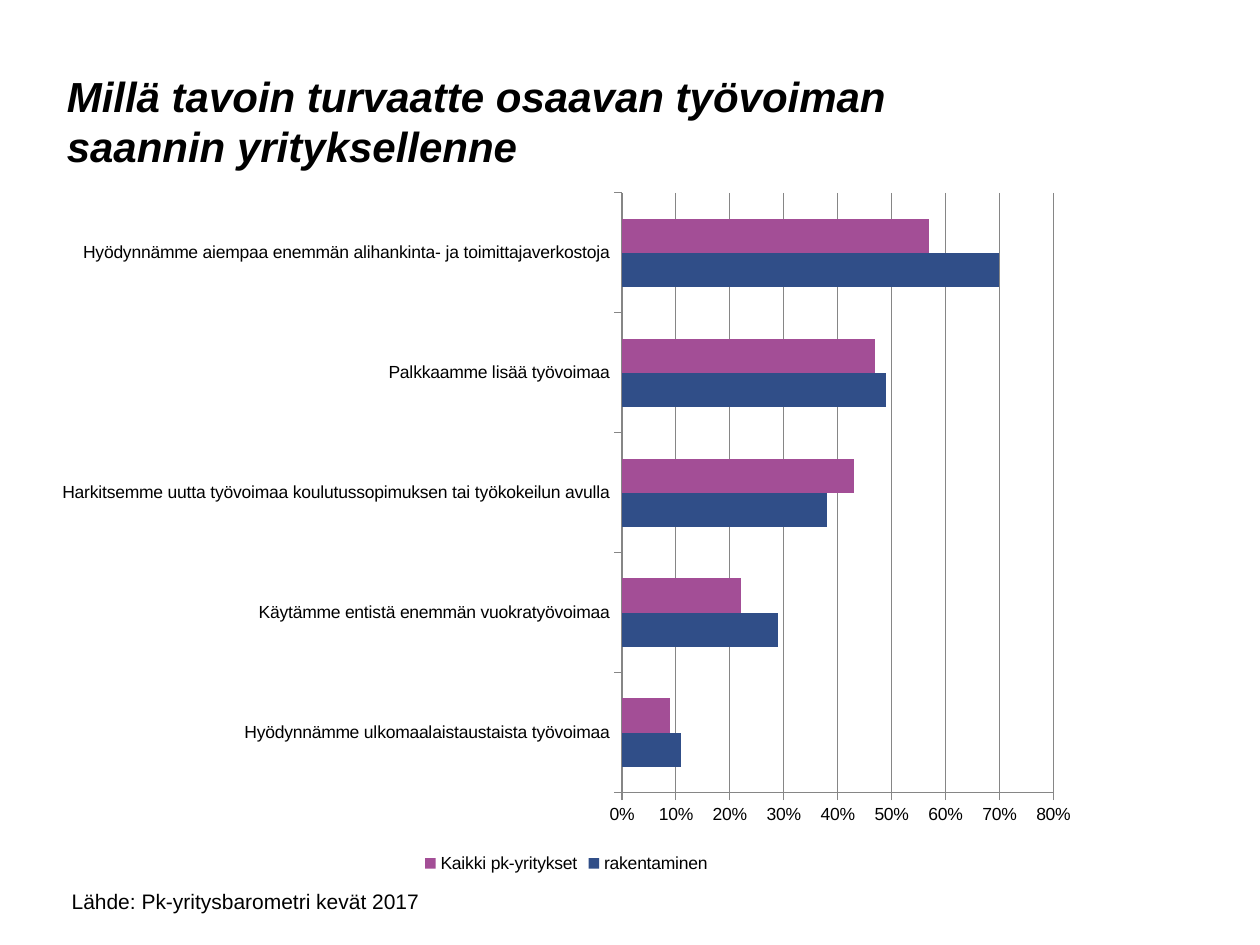
from lxml import etree
from pptx import Presentation
from pptx.chart.data import CategoryChartData
from pptx.dml.color import RGBColor
from pptx.enum.chart import XL_CHART_TYPE, XL_LEGEND_POSITION, XL_TICK_MARK
from pptx.enum.text import MSO_ANCHOR, PP_ALIGN
from pptx.oxml.ns import qn
from pptx.util import Inches, Pt

BAR_CLUSTERED = XL_CHART_TYPE.BAR_CLUSTERED
LEGEND_BOTTOM = XL_LEGEND_POSITION.BOTTOM
TICK_OUTSIDE = XL_TICK_MARK.OUTSIDE
ANCHOR_TOP = MSO_ANCHOR.TOP
ALIGN_LEFT = PP_ALIGN.LEFT

FONT_NAME = "Arial"
BLACK = RGBColor(0x00, 0x00, 0x00)
GRAY = RGBColor(0x86, 0x86, 0x86)
BLUE = RGBColor(0x30, 0x4E, 0x88)
PURPLE = RGBColor(0xA3, 0x4E, 0x96)

TITLE_LAYOUT = 5
TITLE_BOX = (0.43, 0.51, 8, 0.91)
CHART_BOX = (0.33, 1.42, 8.33, 5.55)
SOURCE_BOX = (0.47, 7, 7.78, 0.3)
PLOT_LAYOUT = {"x": 0.553, "y": 0.02, "w": 0.411, "h": 0.858}

CATEGORIES = [
    "Hyödynnämme ulkomaalaistaustaista työvoimaa",
    "Käytämme entistä enemmän vuokratyövoimaa",
    "Harkitsemme uutta työvoimaa koulutussopimuksen tai työkokeilun avulla",
    "Palkkaamme lisää työvoimaa",
    "Hyödynnämme aiempaa enemmän alihankinta- ja toimittajaverkostoja",
]
SERIES = [
    ("rakentaminen", [0.11, 0.29, 0.38, 0.49, 0.70], BLUE),
    ("Kaikki pk-yritykset", [0.09, 0.22, 0.43, 0.47, 0.57], PURPLE),
]


def set_font(font, size, bold=False, italic=False):
    font.name = FONT_NAME
    font.size = Pt(size)
    font.bold = bold
    font.italic = italic
    font.color.rgb = BLACK


def write_text(shape, text, **font_format):
    frame = shape.text_frame
    frame.word_wrap = True
    frame.vertical_anchor = ANCHOR_TOP
    paragraph = frame.paragraphs[0]
    paragraph.alignment = ALIGN_LEFT
    run = paragraph.add_run()
    run.text = text
    set_font(run.font, **font_format)


def add_title(slide, box):
    title = slide.shapes.title
    title.left, title.top, title.width, title.height = map(Inches, box)
    write_text(
        title,
        "Millä tavoin turvaatte osaavan työvoiman saannin yrityksellenne",
        size=24, bold=True, italic=True,
    )


def fix_plot_area(chart, fractions):
    """Pin the inner plot area to fractions of the chart's size."""
    plot_area = chart._chartSpace.find(".//" + qn("c:plotArea"))
    layout = plot_area.find(qn("c:layout"))
    if layout is None:
        layout = etree.Element(qn("c:layout"))
        plot_area.insert(0, layout)
    manual = etree.SubElement(layout, qn("c:manualLayout"))
    settings = {"layoutTarget": "inner", "xMode": "edge", "yMode": "edge", **fractions}
    for name, value in settings.items():
        etree.SubElement(manual, qn("c:" + name)).set("val", str(value))


def format_axis(axis):
    axis.major_tick_mark = TICK_OUTSIDE
    axis.format.line.color.rgb = GRAY
    set_font(axis.tick_labels.font, size=10)


def add_bar_chart(slide, box):
    chart_data = CategoryChartData(number_format="0%")
    chart_data.categories = CATEGORIES
    for name, values, _ in SERIES:
        chart_data.add_series(name, values)
    chart = slide.shapes.add_chart(BAR_CLUSTERED, *map(Inches, box), chart_data).chart
    chart.has_title = False
    set_font(chart.font, size=10)

    plot = chart.plots[0]
    plot.gap_width = 150
    plot.vary_by_categories = False
    for series, (_, _, color) in zip(plot.series, SERIES):
        series.format.fill.solid()
        series.format.fill.fore_color.rgb = color

    format_axis(chart.category_axis)
    value_axis = chart.value_axis
    format_axis(value_axis)
    value_axis.minimum_scale = 0
    value_axis.maximum_scale = 0.8
    value_axis.major_unit = 0.1
    value_axis.tick_labels.number_format = "0%"
    value_axis.tick_labels.number_format_is_linked = False
    value_axis.has_major_gridlines = True
    value_axis.major_gridlines.format.line.color.rgb = GRAY

    chart.has_legend = True
    chart.legend.position = LEGEND_BOTTOM
    chart.legend.include_in_layout = False
    set_font(chart.legend.font, size=10)
    fix_plot_area(chart, PLOT_LAYOUT)


def add_source(slide, box):
    source = slide.shapes.add_textbox(*map(Inches, box))
    write_text(source, "Lähde: Pk-yritysbarometri kevät 2017", size=12)


def main():
    presentation = Presentation()
    presentation.slide_width = Inches(10)
    presentation.slide_height = Inches(7.5)
    slide = presentation.slides.add_slide(presentation.slide_layouts[TITLE_LAYOUT])
    add_title(slide, TITLE_BOX)
    add_bar_chart(slide, CHART_BOX)
    add_source(slide, SOURCE_BOX)
    presentation.save("out.pptx")


if __name__ == "__main__":
    main()
